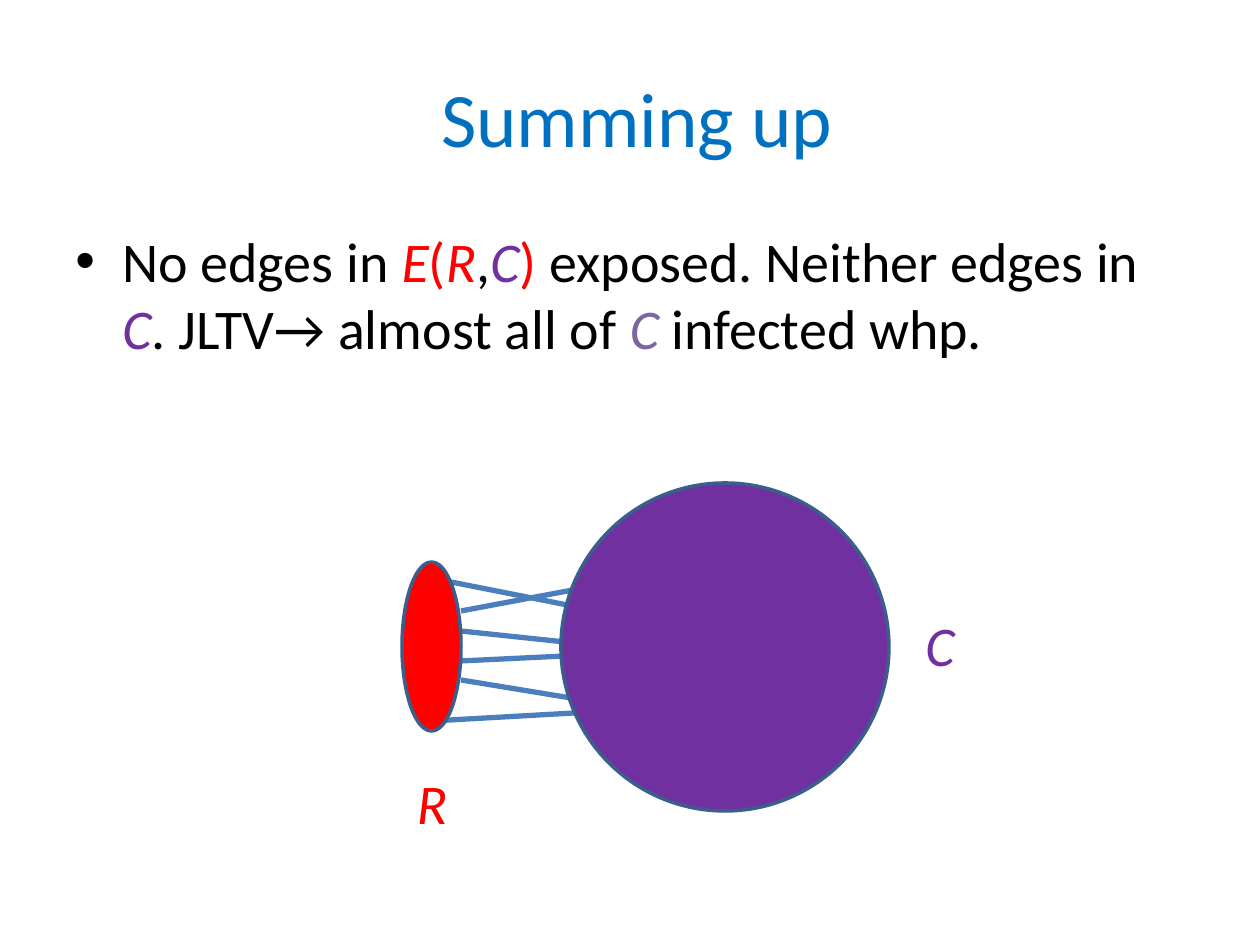
from lxml.etree import SubElement
from pptx import Presentation
from pptx.dml.color import RGBColor
from pptx.enum.shapes import MSO_CONNECTOR, MSO_SHAPE
from pptx.enum.text import MSO_ANCHOR, PP_ALIGN
from pptx.oxml.ns import qn
from pptx.util import Emu, Pt

BLACK, RED, PURPLE, MUTED = "000000", "FF0000", "7030A0", "8064A2"
BLUE, EDGE, OUTLINE = "0070C0", "4B7EBC", "3A5F8C"

# Content: runs are (text, colour, italic), boxes are x, y, w, h in px
TITLE = [("Summing up", BLUE, False)]
BODY = [
    ("No edges in ", BLACK, False), ("E", RED, True), ("(", RED, False),
    ("R", RED, True), (",", BLACK, False), ("C", PURPLE, True),
    (")", RED, False), (" exposed. Neither edges in ", BLACK, False),
    ("C", PURPLE, True), (". JLTV→ almost all of ", BLACK, False),
    ("C ", MUTED, True), ("infected whp.", BLACK, False),
]
EDGES = [
    (461, 611, 669, 572), (461, 661, 669, 651), (432, 721, 610, 711),
    (461, 680, 650, 711), (461, 631, 650, 651), (451, 582, 699, 631),
]
SETS = [((561, 483, 328, 328), PURPLE), ((402, 562, 59, 169), RED)]
LABELS = [("C", PURPLE, 940, 644), ("R", RED, 432, 802)]
LABEL_SIZE = 80


def px(n):
    return Emu(round(n * 914400 / 126))


def rgb(color):
    return RGBColor.from_string(color)


def add_text(s, box, runs, size, align=PP_ALIGN.CENTER, anchor=MSO_ANCHOR.MIDDLE):
    tf = s.shapes.add_textbox(*map(px, box)).text_frame
    tf.word_wrap = True
    tf.vertical_anchor = anchor
    p = tf.paragraphs[0]
    p.alignment = align
    for text, color, italic in runs:
        r = p.add_run()
        r.text = text
        r.font.name = "Calibri"
        r.font.size = Pt(size)
        r.font.italic = italic
        r.font.color.rgb = rgb(color)
    return p


def add_bullet(p, indent):
    pPr = p._p.get_or_add_pPr()
    pPr.set("marL", str(px(indent)))
    pPr.set("indent", str(-px(indent)))
    SubElement(pPr, qn("a:buFont")).set("typeface", "Arial")
    SubElement(pPr, qn("a:buChar")).set("char", "•")


prs = Presentation()
prs.slide_width, prs.slide_height = px(1260), px(945)
s = prs.slides.add_slide(prs.slide_layouts[6])

# Title and bullet
add_text(s, (70, 38, 1134, 157), TITLE, 44)
p = add_text(s, (63, 220, 1134, 160), BODY, 32, PP_ALIGN.LEFT, MSO_ANCHOR.TOP)
p.space_before = Pt(6.4)
add_bullet(p, 47)

# Edges between R and C, behind the two sets
for edge in EDGES:
    line = s.shapes.add_connector(MSO_CONNECTOR.STRAIGHT, *map(px, edge))
    line.line.color.rgb = rgb(EDGE)
    line.line.width = Pt(3)
    SubElement(line._element.spPr, qn("a:effectLst"))

# Sets C and R
for box, color in SETS:
    sp = s.shapes.add_shape(MSO_SHAPE.OVAL, *map(px, box))
    sp.shadow.inherit = False
    sp.fill.solid()
    sp.fill.fore_color.rgb = rgb(color)
    sp.line.color.rgb = rgb(OUTLINE)
    sp.line.width = Pt(2)

# Labels centred on their points
for text, color, x, y in LABELS:
    box = (x - LABEL_SIZE / 2, y - LABEL_SIZE / 2, LABEL_SIZE, LABEL_SIZE)
    add_text(s, box, [(text, color, True)], 32)

prs.save("out.pptx")
